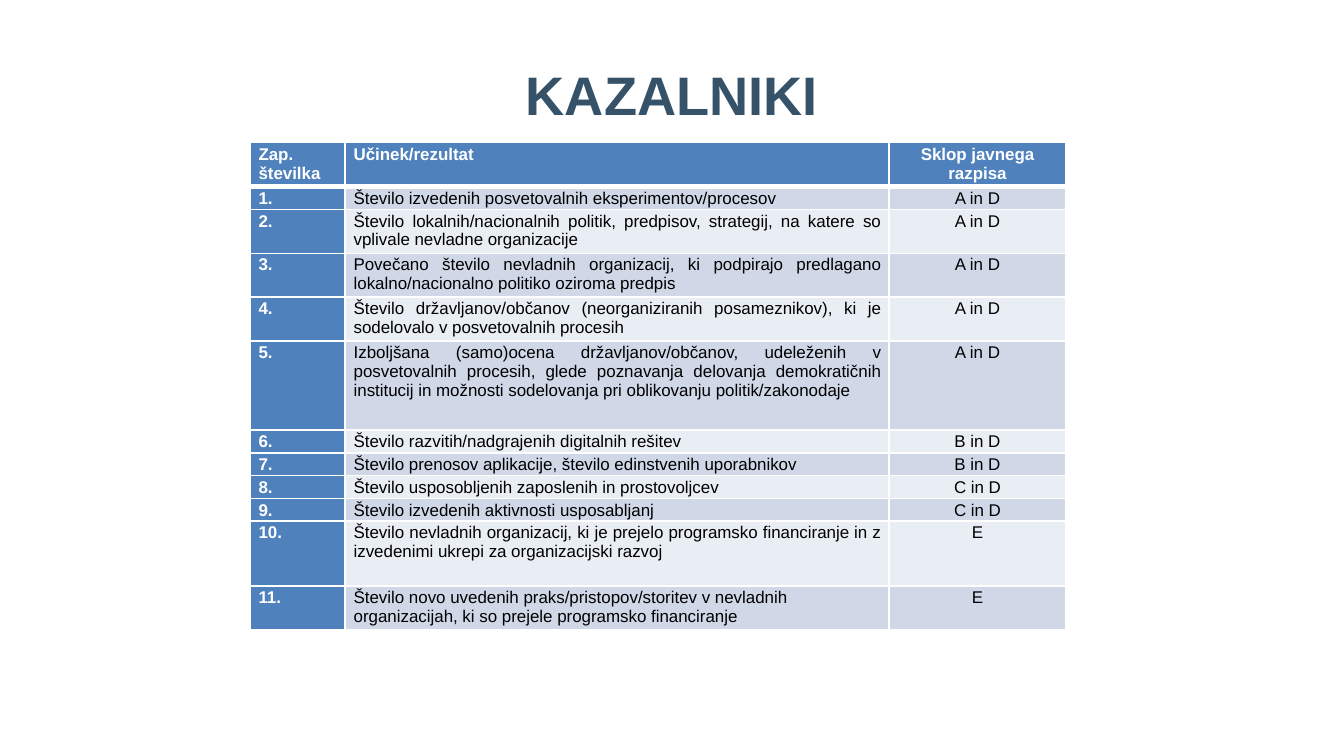
from dataclasses import dataclass

from lxml import etree
from pptx import Presentation
from pptx.dml.color import RGBColor
from pptx.enum import text
from pptx.oxml import ns
from pptx.util import Inches, Pt


@dataclass(frozen=True)
class Theme:
    font: str = "Arial"
    title_size: float = 32
    table_size: float = 10
    title: str = "355269"
    accent: str = "4F81BD"
    bands: tuple = ("E9EDF4", "D0D8E8")
    white: str = "FFFFFF"
    black: str = "000000"


THEME = Theme()
ALIGN = text.PP_ALIGN


def add_text(paragraph, words, size, color, bold, align):
    paragraph.alignment = align
    run = paragraph.add_run()
    run.text = words
    run.font.name = THEME.font
    run.font.size = Pt(size)
    run.font.bold = bold
    run.font.color.rgb = RGBColor.from_string(color)


def add_borders(cell, bottom_width):
    """Draw white cell edges; the bottom one may be thicker."""
    properties = cell._tc.get_or_add_tcPr()
    for side, width in (("L", 1), ("R", 1), ("T", 1), ("B", bottom_width)):
        edge = etree.SubElement(properties, ns.qn(f"a:ln{side}"), w=str(Pt(width)))
        fill = etree.SubElement(edge, ns.qn("a:solidFill"))
        etree.SubElement(fill, ns.qn("a:srgbClr"), val=THEME.white)


HEADER = ("Zap. številka", "Učinek/rezultat", "Sklop javnega razpisa")
# Row height, outcome, part of the tender
INDICATORS = [
    (0.18, "Število izvedenih posvetovalnih eksperimentov/procesov", "A in D"),
    (0.36, "Število lokalnih/nacionalnih politik, predpisov, strategij, na katere so "
           "vplivale nevladne organizacije", "A in D"),
    (0.36, "Povečano število nevladnih organizacij, ki podpirajo predlagano "
           "lokalno/nacionalno politiko oziroma predpis", "A in D"),
    (0.36, "Število državljanov/občanov (neorganiziranih posameznikov), ki je "
           "sodelovalo v posvetovalnih procesih", "A in D"),
    (0.73, "Izboljšana (samo)ocena državljanov/občanov, udeleženih v posvetovalnih "
           "procesih, glede poznavanja delovanja demokratičnih institucij in možnosti "
           "sodelovanja pri oblikovanju politik/zakonodaje", "A in D"),
    (0.18, "Število razvitih/nadgrajenih digitalnih rešitev", "B in D"),
    (0.18, "Število prenosov aplikacije, število edinstvenih uporabnikov", "B in D"),
    (0.18, "Število usposobljenih zaposlenih in prostovoljcev", "C in D"),
    (0.18, "Število izvedenih aktivnosti usposabljanj", "C in D"),
    (0.53, "Število nevladnih organizacij, ki je prejelo programsko financiranje in z "
           "izvedenimi ukrepi za organizacijski razvoj", "E"),
    (0.36, "Število novo uvedenih praks/pristopov/storitev v nevladnih organizacijah, "
           "ki so prejele programsko financiranje", "E"),
]
HEADER_HEIGHT = 0.36
COLUMN_WIDTHS = (0.78, 4.46, 1.45)

prs = Presentation()
prs.slide_width, prs.slide_height = Inches(11.02), Inches(6.2)
slide = prs.slides.add_slide(prs.slide_layouts[6])

title = slide.shapes.add_textbox(Inches(0.55), Inches(0.25), Inches(9.92), Inches(1.04)).text_frame
title.word_wrap = True
title.vertical_anchor = text.MSO_ANCHOR.MIDDLE
title.margin_left = title.margin_right = title.margin_top = title.margin_bottom = 0
add_text(title.paragraphs[0], "KAZALNIKI", THEME.title_size, THEME.title, True, ALIGN.CENTER)

rows = [HEADER] + [(f"{number}.", outcome, part)
                   for number, (_, outcome, part) in enumerate(INDICATORS, 1)]
heights = [HEADER_HEIGHT] + [height for height, _, _ in INDICATORS]
indicators = slide.shapes.add_table(
    len(rows), len(COLUMN_WIDTHS), Inches(2.05), Inches(1.17),
    Inches(sum(COLUMN_WIDTHS)), Inches(sum(heights))).table
for column, width in zip(indicators.columns, COLUMN_WIDTHS):
    column.width = Inches(width)

for r, (height, row) in enumerate(zip(heights, rows)):
    indicators.rows[r].height = Inches(height)
    last = r == len(rows) - 1
    for c, words in enumerate(row):
        cell = indicators.cell(r, c)
        heading = r == 0 or c == 0
        cell.margin_left = cell.margin_right = Inches(0.07)
        # Keeps the carons clear of the border above
        cell.margin_top = Inches(0.02)
        cell.margin_bottom = 0
        add_borders(cell, 3 if r == 0 else 1)
        cell.fill.solid()
        cell.fill.fore_color.rgb = RGBColor.from_string(
            THEME.accent if heading else THEME.bands[r % 2])
        align = ALIGN.CENTER if c == 2 else ALIGN.LEFT if last else ALIGN.JUSTIFY
        add_text(cell.text_frame.paragraphs[0], words, THEME.table_size,
                 THEME.white if heading else THEME.black, heading, align)

prs.save("out.pptx")
